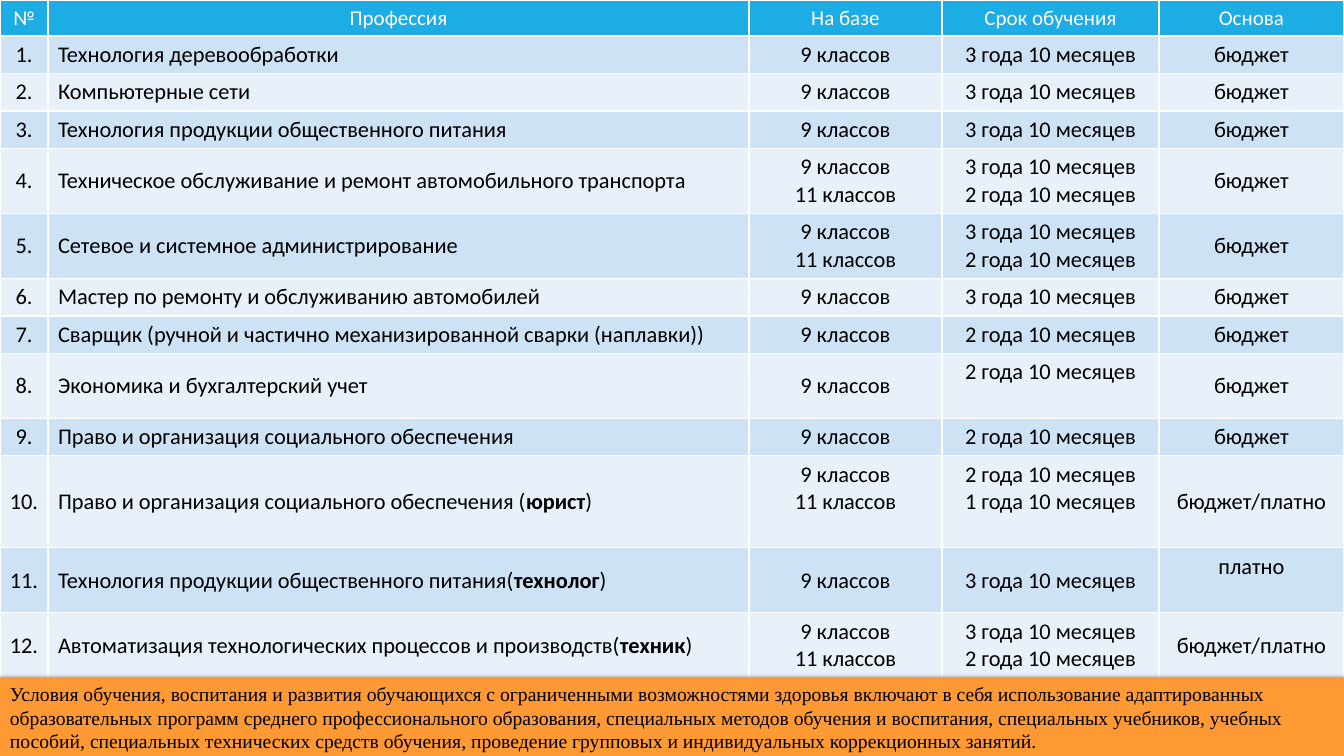
"""Build a slide with a table of college trades and a note on study conditions."""
from lxml import etree
from pptx import Presentation, util as u
from pptx.dml.color import RGBColor
from pptx.enum import shapes, text
from pptx.oxml import ns

PX = u.Inches(1) / 100.8
HUES = {"head": "1CADE4", "odd": "CDE3F5", "even": "E8F1FA",
        "note": "FF9933", "ink": "000000", "white": "FFFFFF"}
TALL = {1: 37, 2: 65, 3: 92}
WIDE = [48, 701, 193, 217, 185]
HEAD = ["№", "Профессия", "На базе", "Срок обучения", "Основа"]
NINE, BOTH = "9 классов", "9 классов\n11 классов"
ONE, TWO, THREE = [f"{n} года 10 месяцев" for n in (1, 2, 3)]
FREE, PAID = "бюджет", "платно"
MIX = f"{FREE}/{PAID}"
LONG, SHORT = f"{THREE}\n{TWO}", f"{TWO}\n{ONE}"

# trade, bold word, base, term, funding, height in lines, columns set at the top
TRADES = [
    ("Технология деревообработки", "", NINE, THREE, FREE, 1, ()),
    ("Компьютерные сети", "", NINE, THREE, FREE, 1, ()),
    ("Технология продукции общественного питания", "", NINE, THREE, FREE, 1, ()),
    ("Техническое обслуживание и ремонт автомобильного транспорта", "",
     BOTH, LONG, FREE, 2, ()),
    ("Сетевое и системное администрирование", "", BOTH, LONG, FREE, 2, ()),
    ("Мастер по ремонту и обслуживанию автомобилей", "", NINE, THREE, FREE, 1, ()),
    ("Сварщик (ручной и частично механизированной сварки (наплавки))", "",
     NINE, TWO, FREE, 1, ()),
    ("Экономика и бухгалтерский учет", "", NINE, TWO, FREE, 2, (3,)),
    ("Право и организация социального обеспечения", "", NINE, TWO, FREE, 1, ()),
    ("Право и организация социального обеспечения (", "юрист",
     BOTH, SHORT, MIX, 3, (2, 3)),
    ("Технология продукции общественного питания(", "технолог",
     NINE, THREE, PAID, 2, (4,)),
    ("Автоматизация технологических процессов и производств(", "техник",
     BOTH, LONG, MIX, 2, ()),
]
NOTE = ("Условия обучения, воспитания и развития обучающихся с ограниченными "
        "возможностями здоровья включают в себя использование адаптированных "
        "образовательных программ среднего профессионального образования, "
        "специальных методов обучения и воспитания, специальных учебников, учебных "
        "пособий, специальных технических средств обучения, проведение групповых и "
        "индивидуальных коррекционных занятий.")


def px(n):
    return u.Emu(round(n * PX))


def add_run(par, words, size, hue, font="Calibri", bold=False):
    run = par.add_run()
    run.text = words
    run.font.size, run.font.name, run.font.bold = u.Pt(size), font, bold
    run.font.color.rgb = RGBColor.from_string(HUES[hue])


deck = Presentation()
deck.slide_width, deck.slide_height = px(1344), px(756)
slide = deck.slides.add_slide(deck.slide_layouts[6])

high = [36] + [TALL[trade[5]] for trade in TRADES]
grid = slide.shapes.add_table(len(high), len(WIDE), 0, 0, px(1344), px(sum(high))).table
for col, wide in zip(grid.columns, WIDE):
    col.width = px(wide)
for row, tall in zip(grid.rows, high):
    row.height = px(tall)

rows = [([[name] for name in HEAD], "head", ())]
for num, (trade, word, base, term, fund, _, tops) in enumerate(TRADES, 1):
    name = [trade, word, ")"] if word else [trade]
    rows.append(([[f"{num}."], name, [base], [term], [fund]],
                 "odd" if num % 2 else "even", tops))

for r, (cells, fill, tops) in enumerate(rows):
    size, hue = (16, "ink") if r else (15, "white")
    for c, parts in enumerate(cells):
        cell = grid.cell(r, c)
        cell.fill.solid()
        cell.fill.fore_color.rgb = RGBColor.from_string(HUES[fill])
        top = r == 0 or c in tops
        cell.vertical_anchor = text.MSO_ANCHOR.TOP if top else text.MSO_ANCHOR.MIDDLE
        if c == 0:
            cell.margin_left = cell.margin_right = px(5)
        for i, line in enumerate(parts[0].split("\n")):
            par = cell.text_frame.paragraphs[0] if i == 0 else cell.text_frame.add_paragraph()
            left = r and c == 1
            par.alignment = text.PP_ALIGN.LEFT if left else text.PP_ALIGN.CENTER
            add_run(par, line, size, hue)
        for i, part in enumerate(parts[1:]):
            add_run(par, part, size, hue, bold=i == 0)

note = slide.shapes.add_shape(shapes.MSO_SHAPE.RECTANGLE, 0, px(677), px(1344), px(82))
note.shadow.inherit = False
note.fill.solid()
note.fill.fore_color.rgb = RGBColor.from_string(HUES["note"])
note.line.fill.background()
glow = note._element.spPr.find(ns.qn("a:effectLst"))
shade = etree.SubElement(glow, ns.qn("a:outerShdw"), blurRad=str(u.Pt(4.5)),
                         dist=str(u.Pt(1.5)), dir="5400000", rotWithShape="0")
tone = etree.SubElement(shade, ns.qn("a:srgbClr"), val=HUES["ink"])
etree.SubElement(tone, ns.qn("a:alpha"), val="63000")
frame = note.text_frame
frame.word_wrap = True
frame.auto_size = text.MSO_AUTO_SIZE.SHAPE_TO_FIT_TEXT
frame.vertical_anchor = text.MSO_ANCHOR.TOP
frame.paragraphs[0].alignment = text.PP_ALIGN.LEFT
add_run(frame.paragraphs[0], NOTE, 14, "ink", "Times New Roman")

deck.save("out.pptx")
